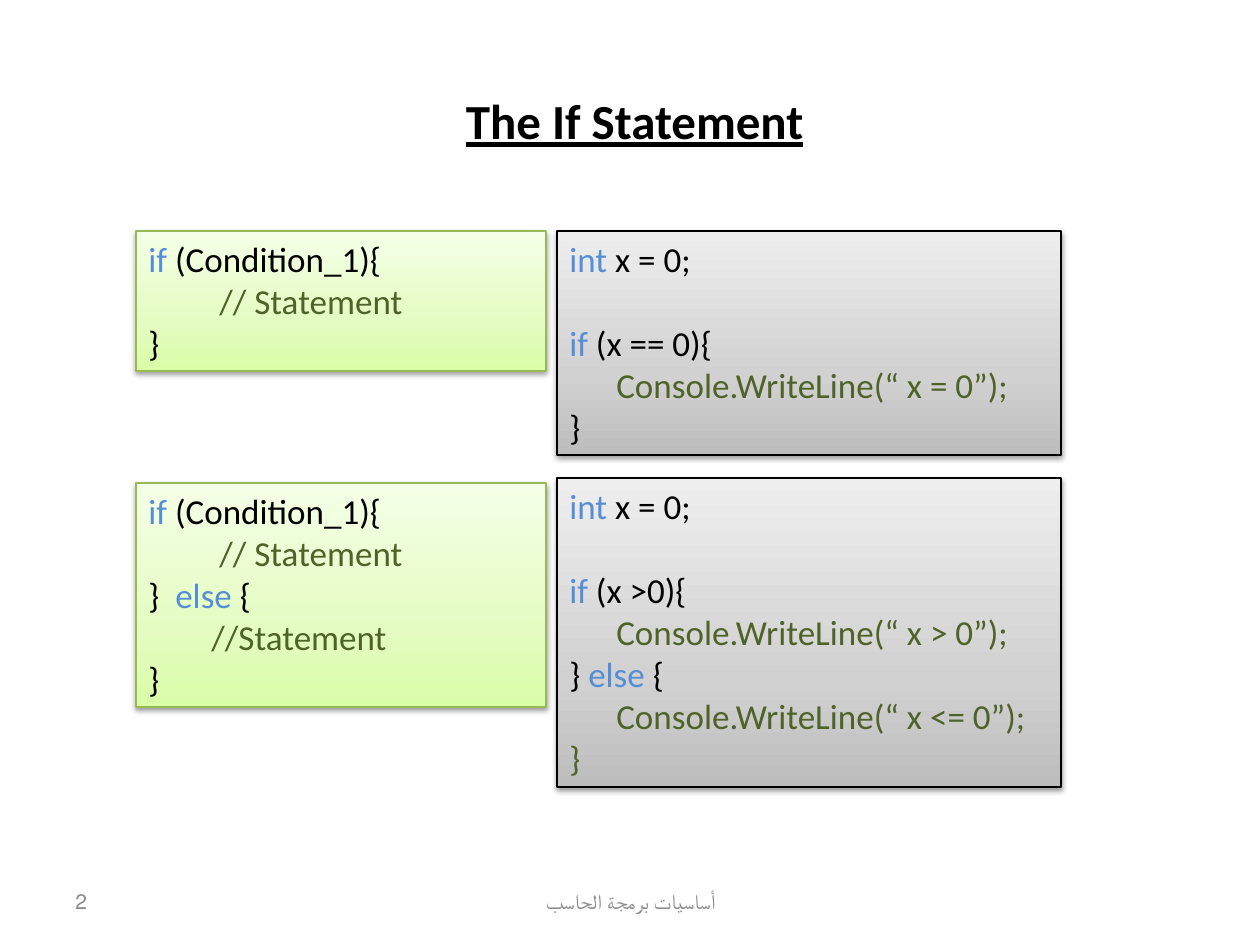
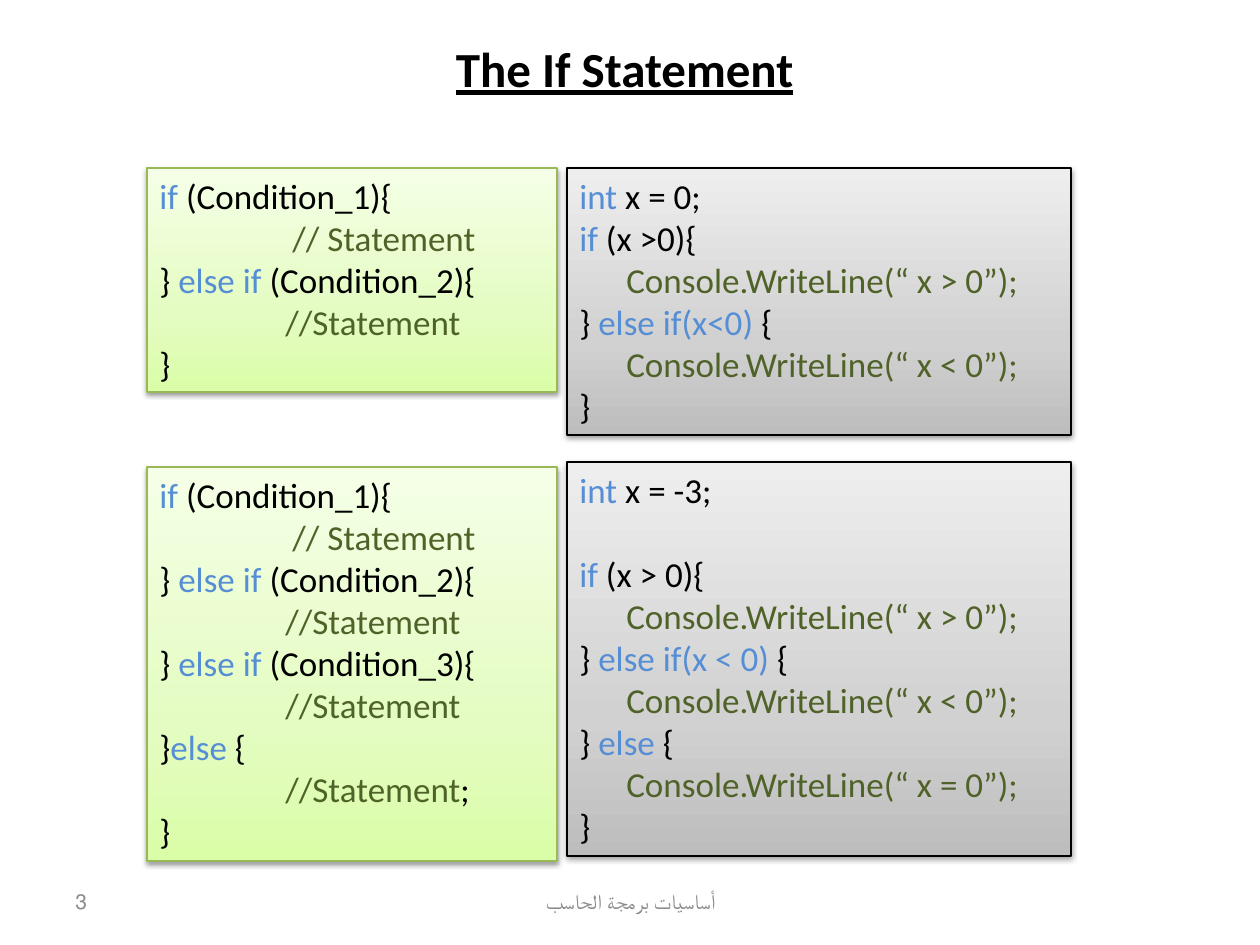
from copy import deepcopy

from lxml.etree import SubElement
from pptx import Presentation
from pptx.dml.color import RGBColor
from pptx.enum.shapes import MSO_SHAPE as Shape
from pptx.enum.text import MSO_ANCHOR as Anchor, MSO_AUTO_SIZE as AutoSize, PP_ALIGN as Align
from pptx.oxml.ns import qn
from pptx.util import Emu, Inches, Pt

SCALE = Inches(1) / 126
FONT = "Calibri"
BLACK = RGBColor(0x00, 0x00, 0x00)
KEYWORD = RGBColor(0x55, 0x8E, 0xD5)
ACTION = RGBColor(0x4F, 0x62, 0x28)
FOOTER_GREY = RGBColor(0x8C, 0x8C, 0x8C)
GREEN_LINE = RGBColor(0x98, 0xB9, 0x55)
GREEN_STOPS = [
    (0, RGBColor(0xDA, 0xFD, 0xA7)),
    (0.35, RGBColor(0xE4, 0xFC, 0xC2)),
    (1, RGBColor(0xF5, 0xFF, 0xE7)),
]
GREY_STOPS = [
    (0, RGBColor(0xBD, 0xBD, 0xBD)),
    (0.35, RGBColor(0xD1, 0xD1, 0xD1)),
    (1, RGBColor(0xEE, 0xEE, 0xEE)),
]
SYNTAX = {"width": 410, "stops": GREEN_STOPS, "line": GREEN_LINE}
EXAMPLE = {"width": 504, "stops": GREY_STOPS, "line": BLACK}


def px(*lengths):
    return [Emu(round(length * SCALE)) for length in lengths]


def add_text(paragraph, text, size=20, color=BLACK, bold=False, underline=False, align=Align.LEFT, rtl=False):
    paragraph.alignment = align
    if rtl:
        paragraph._p.get_or_add_pPr().set("rtl", "1")
    run = paragraph.add_run()
    run.text = text
    font = run.font
    font.name = FONT
    font.size = Pt(size)
    font.bold = bold
    font.underline = underline
    font.color.rgb = color


BLANK = None
CLOSE = (0, [("}", BLACK)])
CLOSE_GREEN = (0, [("}", ACTION)])
IF_CONDITION = (0, [("if", KEYWORD), (" (Condition_1){", BLACK)])
ELSE_IF_CONDITION = (0, [("} ", BLACK), ("else if", KEYWORD), (" (Condition_2){", BLACK)])
NEAR_SPACED = (71, [("// Statement", ACTION)])
NEAR = (63, [("//Statement", ACTION)])
FAR_SPACED = (133, [("// Statement", ACTION)])
FAR = (126, [("//Statement", ACTION)])
INT_ZERO = (0, [("int ", KEYWORD), ("x = 0;", BLACK)])
ELSE = (0, [("} ", BLACK), ("else", KEYWORD), (" {", BLACK)])
WRITE_ZERO, WRITE_POSITIVE, WRITE_NEGATIVE, WRITE_NOT_POSITIVE = [
    (47, [(f"Console.WriteLine(“ x {test} 0”);", ACTION)]) for test in ("=", ">", "<", "<=")
]
IF_ELSE_IF = [IF_CONDITION, FAR_SPACED, ELSE_IF_CONDITION, FAR]

SLIDES = [
    {
        "number": "2",
        "title_at": (451, 84),
        "boxes": [
            (136, 231, SYNTAX, [IF_CONDITION, NEAR_SPACED, CLOSE]),
            (136, 483, SYNTAX, [
                IF_CONDITION,
                NEAR_SPACED,
                (0, [("}  ", BLACK), ("else", KEYWORD), (" {", BLACK)]),
                NEAR,
                CLOSE,
            ]),
            (557, 231, EXAMPLE, [
                INT_ZERO,
                BLANK,
                (0, [("if", KEYWORD), (" (x == 0){", BLACK)]),
                WRITE_ZERO,
                CLOSE,
            ]),
            (557, 478, EXAMPLE, [
                INT_ZERO,
                BLANK,
                (0, [("if", KEYWORD), (" (x >0){", BLACK)]),
                WRITE_POSITIVE,
                ELSE,
                WRITE_NOT_POSITIVE,
                CLOSE_GREEN,
            ]),
        ],
    },
    {
        "number": "3",
        "title_at": (441, 32),
        "boxes": [
            (147, 467, SYNTAX, IF_ELSE_IF + [
                (0, [("}", BLACK), (" else if", KEYWORD), (" (Condition_3){", BLACK)]),
                FAR,
                (0, [("}", BLACK), ("else ", KEYWORD), ("{", BLACK)]),
                (126, [("//Statement", ACTION), (";", BLACK)]),
                CLOSE,
            ]),
            (147, 168, SYNTAX, IF_ELSE_IF + [CLOSE]),
            (567, 168, EXAMPLE, [
                INT_ZERO,
                (0, [("if", KEYWORD), (" (x >0){", BLACK)]),
                WRITE_POSITIVE,
                (0, [("} ", BLACK), ("else if(x<0) ", KEYWORD), ("{", BLACK)]),
                WRITE_NEGATIVE,
                CLOSE,
            ]),
            (567, 462, EXAMPLE, [
                (0, [("int ", KEYWORD), ("x = -3;", BLACK)]),
                BLANK,
                (0, [("if", KEYWORD), (" (x > 0){", BLACK)]),
                WRITE_POSITIVE,
                (0, [("} ", BLACK), ("else if(x < 0) ", KEYWORD), ("{", BLACK)]),
                WRITE_NEGATIVE,
                ELSE,
                WRITE_ZERO,
                CLOSE,
            ]),
        ],
    },
]

presentation = Presentation()
presentation.slide_width, presentation.slide_height = px(1260, 945)

for content in SLIDES:
    slide = presentation.slides.add_slide(presentation.slide_layouts[5])

    title = slide.shapes.title
    title.left, title.top, title.width, title.height = px(*content["title_at"], 367, 72)
    title_frame = title.text_frame
    title_frame.word_wrap = False
    title_frame.auto_size = AutoSize.SHAPE_TO_FIT_TEXT
    title_frame.vertical_anchor = Anchor.MIDDLE
    add_text(title_frame.paragraphs[0], "The If Statement", size=28, bold=True,
             underline=True, align=Align.CENTER, rtl=True)

    for left, width, text, align in [
        (431, 399, "أساسيات برمجة الحاسب", Align.CENTER),
        (63, 294, content["number"], Align.LEFT),
    ]:
        footer = slide.shapes.add_textbox(*px(left, 876, width, 50))
        footer.text_frame.word_wrap = True
        footer.text_frame.vertical_anchor = Anchor.MIDDLE
        add_text(footer.text_frame.paragraphs[0], text, size=12, color=FOOTER_GREY,
                 align=align, rtl=True)

    for left, top, style, code in content["boxes"]:
        height = 13 + len(code) * 127 // 3
        box = slide.shapes.add_shape(Shape.RECTANGLE, *px(left, top, style["width"], height))
        box.line.color.rgb = style["line"]
        box.line.width = Pt(0.75)

        box.fill.gradient()
        box.fill.gradient_angle = 90
        properties = box._element.spPr
        stop_list = properties.find(qn("a:gradFill")).find(qn("a:gsLst"))
        stop_list.append(deepcopy(stop_list[0]))
        for stop, (position, color) in zip(box.fill.gradient_stops, style["stops"]):
            stop.position = position
            stop.color.rgb = color

        box.shadow.inherit = False
        shadow = SubElement(properties.find(qn("a:effectLst")), qn("a:outerShdw"),
                            blurRad="40000", dist="20000", dir="5400000", rotWithShape="0")
        shadow_color = SubElement(shadow, qn("a:srgbClr"), val="000000")
        SubElement(shadow_color, qn("a:alpha"), val="38000")

        frame = box.text_frame
        frame.word_wrap = True
        frame.auto_size = AutoSize.SHAPE_TO_FIT_TEXT
        frame.vertical_anchor = Anchor.TOP
        paragraph = frame.paragraphs[0]
        for row, line in enumerate(code):
            if line is BLANK:
                continue
            if row:
                paragraph = frame.add_paragraph()
                if code[row - 1] is BLANK:
                    paragraph.space_before = Pt(24)
            indent, runs = line
            paragraph._p.get_or_add_pPr().set("marL", str(px(indent)[0]))
            for text, color in runs:
                add_text(paragraph, text, color=color)

presentation.save("out.pptx")
